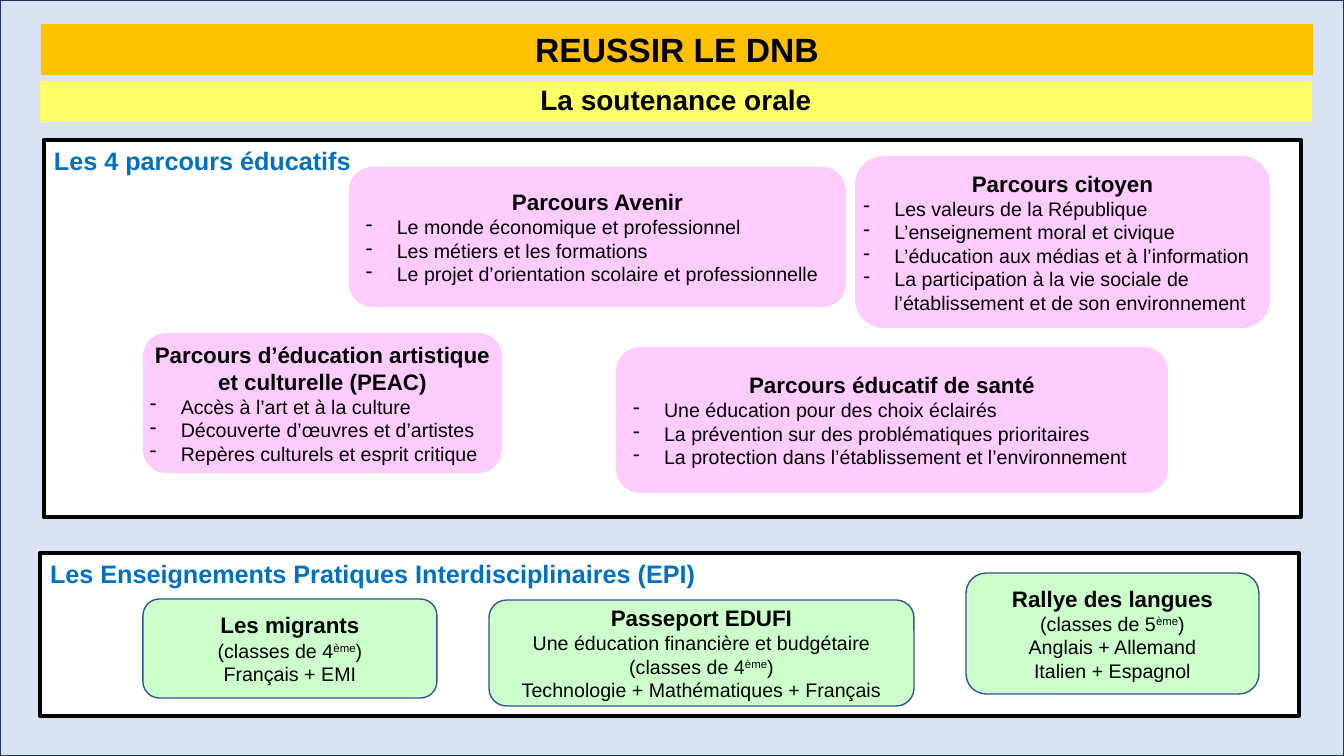
import dataclasses

import pptx
import pptx.dml.color
import pptx.enum.shapes
import pptx.enum.text
import pptx.oxml
import pptx.oxml.ns
import pptx.util

SHAPE = pptx.enum.shapes.MSO_SHAPE
ANCHOR = pptx.enum.text.MSO_ANCHOR
ALIGN = pptx.enum.text.PP_ALIGN


@dataclasses.dataclass(frozen=True)
class Theme:
    font: str = "Arial"
    text: str = "000000"
    heading: str = "0070C0"
    backdrop: str = "DAE3F3"
    backdrop_line: str = "1E3256"
    title_band: str = "FFC000"
    subtitle_band: str = "FFFF66"
    panel: str = "FFFFFF"
    panel_line: str = "000000"
    path_card: str = "FFCCFF"
    epi_card: str = "CCFFCC"
    epi_line: str = "325491"
    title_size: int = 24
    subtitle_size: int = 20
    heading_size: int = 18
    card_size: int = 16
    body_size: int = 14


THEME = Theme()

PATHS = [
    ((349, 167, 497, 140), 10, ["Parcours Avenir"], [
        "Le monde économique et professionnel",
        "Les métiers et les formations",
        "Le projet d’orientation scolaire et professionnelle"]),
    ((855, 156, 415, 172), 0, ["Parcours citoyen"], [
        "Les valeurs de la République",
        "L’enseignement moral et civique",
        "L’éducation aux médias et à l’information",
        "La participation à la vie sociale de l’établissement et de son environnement"]),
    ((616, 347, 552, 146), 10, ["Parcours éducatif de santé"], [
        "Une éducation pour des choix éclairés",
        "La prévention sur des problématiques prioritaires",
        "La protection dans l’établissement et l’environnement"]),
    ((143, 333, 359, 140), 0,
     ["Parcours d’éducation artistique", "et culturelle (PEAC)"], [
        "Accès à l’art et à la culture",
        "Découverte d’œuvres et d’artistes",
        "Repères culturels et esprit critique"]),
]

EPIS = [
    ((966, 573, 293, 121), "Rallye des langues",
     ["(classes de 5^ème^)", "Anglais + Allemand", "Italien + Espagnol"]),
    ((489, 600, 425, 106), "Passeport EDUFI",
     ["Une éducation financière et budgétaire (classes de 4^ème^)",
      "Technologie + Mathématiques + Français"]),
    ((143, 599, 294, 99), "Les migrants",
     ["(classes de 4^ème^)", "Français + EMI"]),
]


def px(n):
    return pptx.util.Emu(round(n * 914400 / 100.8))


def rgb(value):
    return pptx.dml.color.RGBColor.from_string(value)


def paint(sp, fill, line=None, width=1):
    sp.fill.solid()
    sp.fill.fore_color.rgb = rgb(fill)
    if line:
        sp.line.color.rgb = rgb(line)
        sp.line.width = pptx.util.Pt(width)
    else:
        sp.line.fill.background()


def set_frame(sp, anchor, side=10):
    tf = sp.text_frame
    tf.word_wrap = True
    tf.auto_size = pptx.enum.text.MSO_AUTO_SIZE.NONE
    tf.vertical_anchor = anchor
    tf.margin_left = tf.margin_right = px(side)
    tf.margin_top = tf.margin_bottom = px(5)
    return tf


def add_box(s, kind, box, fill, line=None, width=1):
    sp = s.shapes.add_shape(kind, *map(px, box))
    sp.shadow.inherit = False
    paint(sp, fill, line, width)
    return sp


def add_run(p, text, size, bold=False, color=THEME.text):
    r = p.add_run()
    r.text = text
    r.font.name = THEME.font
    r.font.size = pptx.util.Pt(size)
    r.font.bold = bold
    r.font.color.rgb = rgb(color)
    return r


def add_heading(tf, lines, size, align=ALIGN.CENTER, color=THEME.text):
    p = tf.paragraphs[0]
    p.alignment = align
    for i, line in enumerate(lines):
        if i:
            p.add_line_break()
        add_run(p, line, size, True, color)
    return p


def add_bullet(tf, text):
    p = tf.add_paragraph()
    p.alignment = ALIGN.LEFT
    pPr = p._p.get_or_add_pPr()
    pPr.set("marL", str(px(31)))
    pPr.set("indent", str(-px(31)))
    pPr.append(pptx.oxml.parse_xml(
        f'<a:buChar {pptx.oxml.ns.nsdecls("a")} char="-"/>'))
    add_run(p, text, THEME.body_size)


def add_centered(tf, text):
    p = tf.add_paragraph()
    p.alignment = ALIGN.CENTER
    for i, part in enumerate(text.split("^")):
        r = add_run(p, part, THEME.body_size)
        if i % 2:
            r._r.get_or_add_rPr().set("baseline", "30000")


def add_title(s, text):
    sp = s.shapes.title
    sp.left, sp.top, sp.width, sp.height = map(px, (41, 24, 1272, 51))
    paint(sp, THEME.title_band)
    p = add_heading(set_frame(sp, ANCHOR.MIDDLE), [text], THEME.title_size)
    p.line_spacing = 1.0


def add_subtitle(s, text):
    sp = add_box(s, SHAPE.RECTANGLE, (40, 81, 1272, 41), THEME.subtitle_band)
    p = add_heading(set_frame(sp, ANCHOR.BOTTOM), [text], THEME.subtitle_size)
    p.line_spacing = 0.9


def add_panel(s, box, heading):
    sp = add_box(s, SHAPE.RECTANGLE, box, THEME.panel, THEME.panel_line, 3)
    add_heading(set_frame(sp, ANCHOR.TOP), [heading], THEME.heading_size,
                ALIGN.LEFT, THEME.heading)


def add_path_card(s, box, side, title, items):
    sp = add_box(s, SHAPE.ROUNDED_RECTANGLE, box, THEME.path_card)
    tf = set_frame(sp, ANCHOR.MIDDLE, side)
    add_heading(tf, title, THEME.card_size)
    for item in items:
        add_bullet(tf, item)


def add_epi_card(s, box, title, lines):
    sp = add_box(s, SHAPE.ROUNDED_RECTANGLE, box, THEME.epi_card, THEME.epi_line)
    tf = set_frame(sp, ANCHOR.MIDDLE)
    add_heading(tf, [title], THEME.card_size)
    for line in lines:
        add_centered(tf, line)


def main():
    prs = pptx.Presentation()
    prs.slide_width, prs.slide_height = px(1344), px(756)
    s = prs.slides.add_slide(prs.slide_layouts[5])
    backdrop = add_box(s, SHAPE.RECTANGLE, (0, 0, 1344, 756),
                       THEME.backdrop, THEME.backdrop_line)
    s.shapes.title._element.addprevious(backdrop._element)
    add_title(s, "REUSSIR LE DNB")
    add_subtitle(s, "La soutenance orale")
    add_panel(s, (40, 553, 1259, 163),
              "Les Enseignements Pratiques Interdisciplinaires (EPI)")
    for epi in EPIS:
        add_epi_card(s, *epi)
    add_panel(s, (44, 140, 1257, 377), "Les 4 parcours éducatifs")
    for path_card in PATHS:
        add_path_card(s, *path_card)
    prs.save("out.pptx")


if __name__ == "__main__":
    main()
